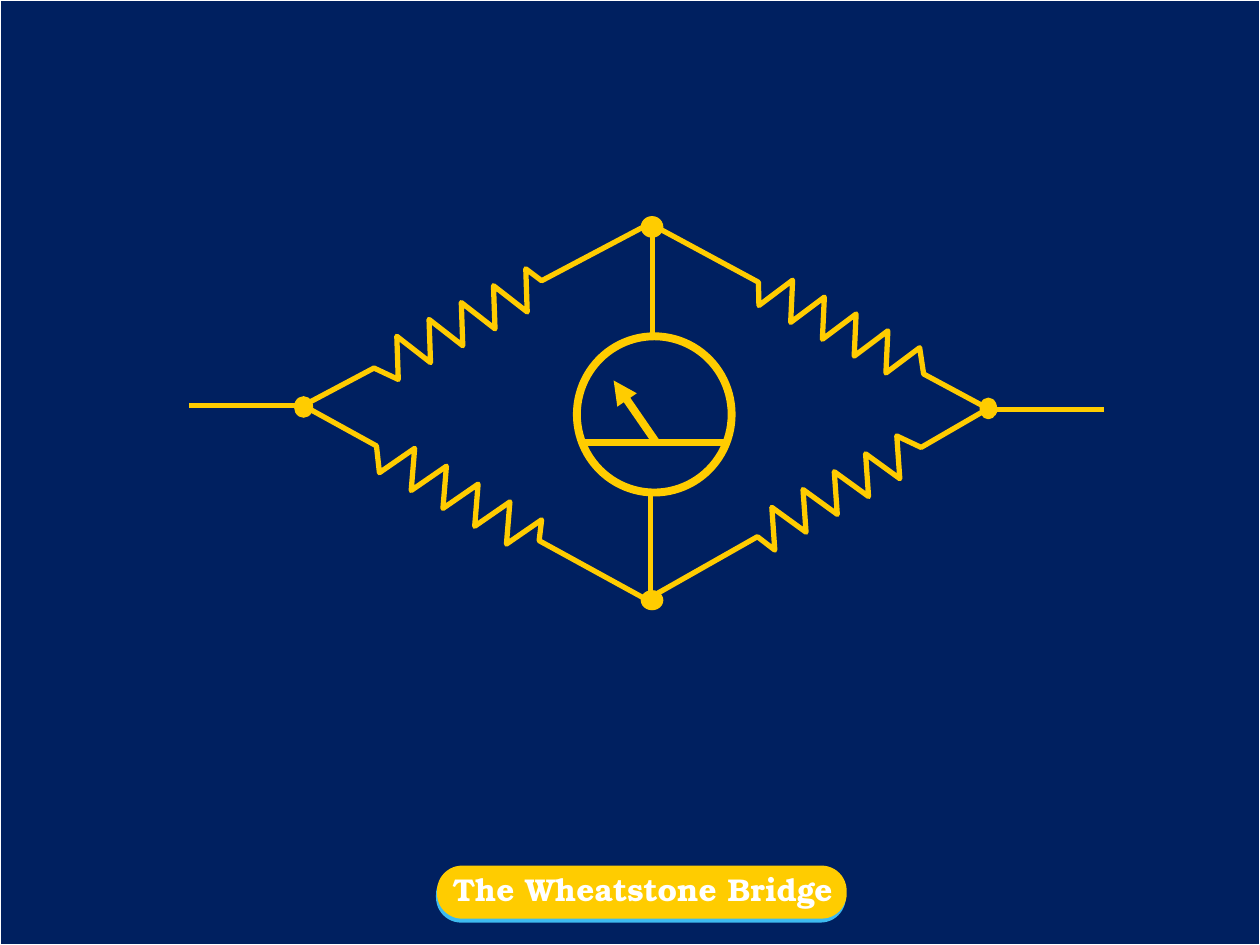
from lxml import etree
from pptx import Presentation
from pptx.dml.color import RGBColor
from pptx.enum.shapes import MSO_CONNECTOR, MSO_SHAPE
from pptx.enum.text import MSO_ANCHOR, PP_ALIGN
from pptx.oxml.ns import qn
from pptx.util import Cm, Pt

OVAL = MSO_SHAPE.OVAL
RECTANGLE = MSO_SHAPE.RECTANGLE
ROUNDED = MSO_SHAPE.ROUNDED_RECTANGLE
STRAIGHT = MSO_CONNECTOR.STRAIGHT
CENTER = PP_ALIGN.CENTER
TOP = MSO_ANCHOR.TOP

NAVY, YELLOW, BLUE, WHITE = "002060", "FFCC00", "3EBBF0", "FFFFFF"
FONT = "TeX Gyre Bonum"
TITLE_ONLY = 5
TEETH = 5
WIRE, METER = 3, 4.5

# start, first bend, first and second tooth point, step per tooth, last bend, end
RESISTORS = [
    ((6.07, 8.2), (7.54, 7.42), (8.03, 7.65), (8, 6.78), (0.65, -0.34), (10.92, 5.66), (13.21, 4.45)),
    ((20.02, 8.18), (18.57, 9.02), (18.08, 8.79), (18.14, 9.65), (-0.63, 0.36), (15.27, 10.82), (13.03, 12.09)),
    ((6.12, 8.18), (7.59, 8.99), (7.65, 9.53), (8.36, 9.04), (0.64, 0.36), (10.87, 10.9), (13.13, 12.14)),
    ((20.09, 8.33), (18.62, 7.54), (18.54, 7.01), (17.86, 7.52), (-0.64, -0.34), (15.29, 5.69), (13.03, 4.47)),
]
WIRES = [
    ((13.16, 4.5), (13.16, 6.73)),
    ((13.11, 12.12), (13.11, 9.93)),
    ((3.81, 8.18), (6.12, 8.18)),
    ((19.91, 8.26), (22.25, 8.26)),
]
NODES = [
    (5.94, 8, 0.36, 0.41),
    (12.93, 4.37, 0.43, 0.41),
    (12.93, 11.91, 0.43, 0.38),
    (19.76, 8.03, 0.33, 0.41),
]


def color(value):
    return RGBColor.from_string(value)


def style(shape, fill=None, line=None, width=0.75):
    shape.shadow.inherit = False
    if fill:
        shape.fill.solid()
        shape.fill.fore_color.rgb = color(fill)
    else:
        shape.fill.background()
    if line:
        shape.line.color.rgb = color(line)
        shape.line.width = Pt(width)
    else:
        shape.line.fill.background()


def add_shape(page, kind, place, **look):
    shape = page.shapes.add_shape(kind, *(Cm(length) for length in place))
    style(shape, **look)
    return shape


def add_pill(page, place, fill):
    pill = add_shape(page, ROUNDED, place, fill=fill)
    pill.adjustments[0] = 0.475


def add_line(page, start, end, width, arrow=False):
    line = page.shapes.add_connector(STRAIGHT, *(Cm(length) for length in start + end))
    line.line.color.rgb = color(YELLOW)
    line.line.width = Pt(width)
    properties = line.element.spPr
    if arrow:
        etree.SubElement(properties.find(qn("a:ln")), qn("a:tailEnd"), type="triangle")
    etree.SubElement(properties, qn("a:effectLst"))


def add_resistor(page, start, bend, first, second, step, last_bend, end):
    points = [start, bend]
    for tooth in range(TEETH):
        for x, y in (first, second):
            points.append((x + tooth * step[0], y + tooth * step[1]))
    points += [last_bend, end]
    corners = [(Cm(x), Cm(y)) for x, y in points]
    builder = page.shapes.build_freeform(*corners[0])
    builder.add_line_segments(corners[1:], close=False)
    style(builder.convert_to_shape(), line=YELLOW, width=WIRE)


def format_title(title, text, place, size):
    title.left, title.top, title.width, title.height = (Cm(length) for length in place)
    frame = title.text_frame
    frame.text = text
    frame.word_wrap = False
    frame.vertical_anchor = TOP
    para = frame.paragraphs[0]
    para.alignment = CENTER
    para.font.name = FONT
    para.font.size = Pt(size)
    para.font.bold = True
    para.font.color.rgb = color(WHITE)
    # Bring the title in front of the pills
    title.element.getparent().append(title.element)


def add_meter(page):
    add_shape(page, OVAL, (11.63, 6.78, 3.12, 3.15), line=YELLOW, width=METER)
    add_line(page, (11.73, 8.92), (14.63, 8.92), METER)
    add_line(page, (13.23, 8.92), (12.37, 7.67), METER, arrow=True)


def main():
    deck = Presentation()
    deck.slide_width, deck.slide_height = Cm(25.4), Cm(19.05)
    page = deck.slides.add_slide(deck.slide_layouts[TITLE_ONLY])
    add_shape(page, RECTANGLE, (0, 0, 25.4, 19.05), fill=NAVY, line=WHITE)
    add_pill(page, (8.79, 17.53, 8.26, 1.07), BLUE)
    add_pill(page, (8.81, 17.45, 8.26, 1.07), YELLOW)
    format_title(page.shapes.title, "The Wheatstone Bridge", (8.86, 17.42, 8.2, 1.02), 18)
    for resistor in RESISTORS:
        add_resistor(page, *resistor)
    add_meter(page)
    for start, end in WIRES:
        add_line(page, start, end, WIRE)
    for place in NODES:
        add_shape(page, OVAL, place, fill=YELLOW, line=YELLOW)
    deck.save("out.pptx")


if __name__ == "__main__":
    main()
